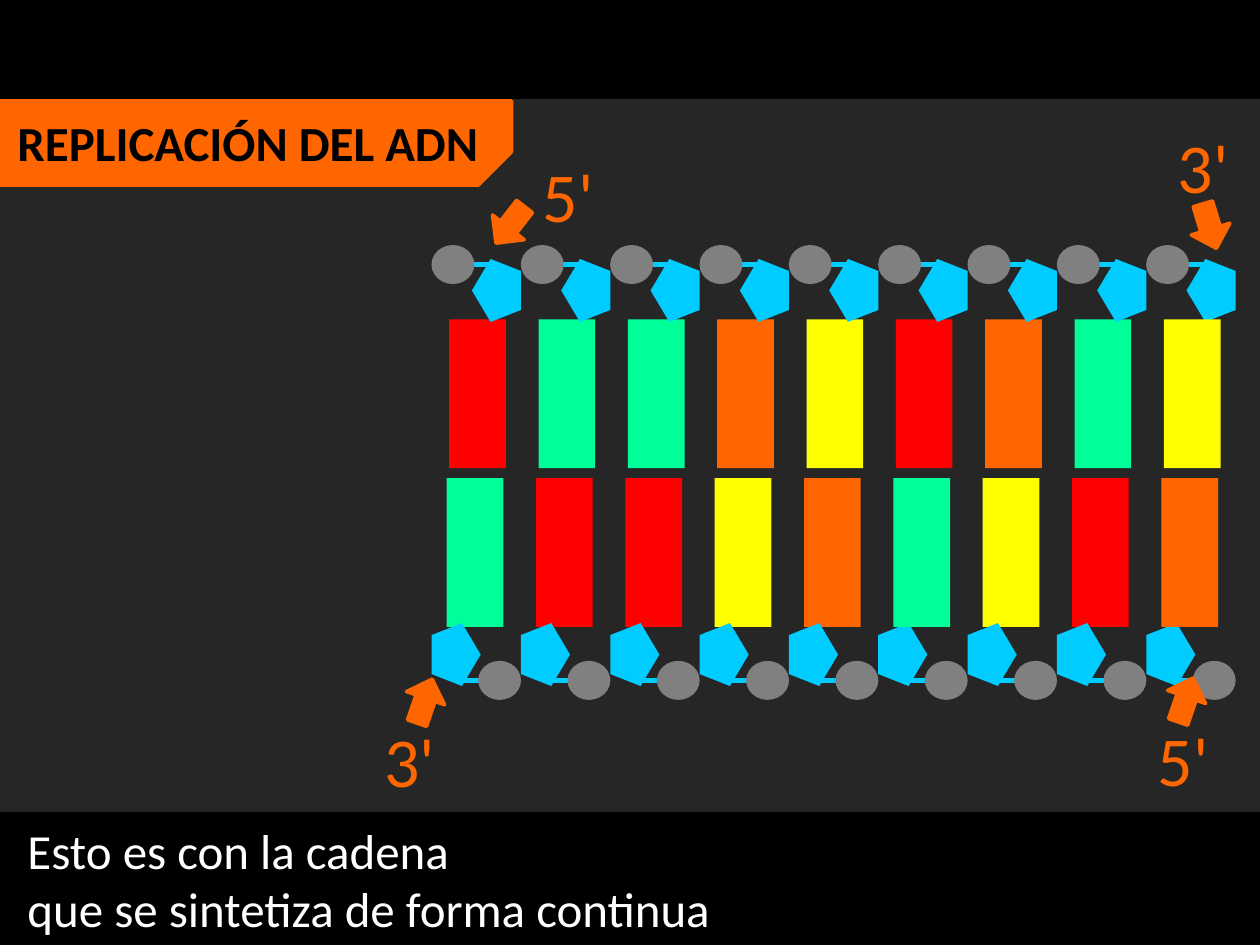
from dataclasses import dataclass

from lxml.etree import SubElement
from pptx import Presentation
from pptx.dml.color import RGBColor
from pptx.enum.shapes import MSO_CONNECTOR, MSO_SHAPE
from pptx.enum.text import MSO_AUTO_SIZE
from pptx.oxml.ns import qn
from pptx.util import Inches, Pt

WIDTH, HEIGHT = Inches(10), Inches(7.5)
STEP = 7.09  # distance between nucleotides, in percent of the width


@dataclass(frozen=True)
class Theme:
    font: str = "Calibri"
    back: str = "000000"
    panel: str = "262626"
    accent: str = "FF6600"
    sugar: str = "00CCFF"
    acid: str = "808080"
    light: str = "FFFFFF"
    body: int = 28
    label: int = 40
    edge: int = 2
    bond: int = 3


@dataclass(frozen=True)
class Strand:
    """Places of the first nucleotide's parts, in percent of the slide."""
    bases: str
    turn: int
    base: tuple
    sugar: tuple
    acid: tuple
    bond: float
    front: tuple  # columns whose base lies over its sugar


THEME = Theme()
BASES = {"R": "FF0000", "G": "00FF99", "O": "FF6600", "Y": "FFFF00"}
STRANDS = (
    Strand("GRRYOGYRO", 90, (35.45, 50.6), (34.25, 65.93),
           (37.95, 69.93), 72, (5, 8)),
    Strand("RGGOYROGY", 270, (35.65, 33.8), (37.45, 27.4),
           (34.25, 25.93), 28, (8,)),
)
ENDS = (  # text, text place, arrow place, arrow turn
    ("3'", (92.5, 12.4), (94.4, 21.47), 343.1),
    ("5'", (42.1, 15.47), (38.9, 21.33), 37.9),
    ("3'", (29.5, 75.33), (32.1, 71.73), 199),
    ("5'", (90.9, 75.2), (92.5, 71.6), 199),
)


def across(share):
    return int(WIDTH * share / 100)


def down(share):
    return int(HEIGHT * share / 100)


def paint(color):
    return RGBColor.from_string(color)


def shape(shapes, kind, spot, size, color, turn=0, edge=False):
    """Add a preset shape; spot and size describe it as seen once turned."""
    left, top = across(spot[0]), down(spot[1])
    wide, high = across(size[0]), down(size[1])
    if turn in (90, 270):
        left, top = left + (wide - high) // 2, top + (high - wide) // 2
        wide, high = high, wide
    item = shapes.add_shape(kind, left, top, wide, high)
    item.rotation = turn
    item.shadow.inherit = False
    item.fill.solid()
    item.fill.fore_color.rgb = paint(color)
    if edge:
        item.line.color.rgb = paint(color)
        item.line.width = Pt(THEME.edge)
    else:
        item.line.fill.background()
    return item


def bond(shapes, left, right, row):
    line = shapes.add_connector(MSO_CONNECTOR.STRAIGHT, across(left),
                                down(row), across(right), down(row))
    line.line.color.rgb = paint(THEME.sugar)
    line.line.width = Pt(THEME.bond)
    SubElement(line.element.spPr, qn("a:effectLst"))


def text(shapes, lines, spot, size, points, color, bold=False, wrap=True):
    box = shapes.add_textbox(across(spot[0]), down(spot[1]),
                             across(size[0]), down(size[1]))
    frame = box.text_frame
    frame.word_wrap = wrap
    frame.auto_size = MSO_AUTO_SIZE.SHAPE_TO_FIT_TEXT
    frame.text = "\n".join(lines)
    for para in frame.paragraphs:
        para.font.name = THEME.font
        para.font.size = Pt(points)
        para.font.bold = bold
        para.font.color.rgb = paint(color)


def chain(shapes, strand):
    """Draw one strand as a group of nucleotides."""
    group = shapes.add_group_shape().shapes
    for col, code in enumerate(strand.bases):
        shift = col * STEP

        def part(kind, spot, size, color):
            shape(group, kind, (spot[0] + shift, spot[1]), size, color,
                  strand.turn)

        def base():
            part(MSO_SHAPE.RECTANGLE, strand.base, (4.5, 15.73), BASES[code])

        if col not in strand.front:
            base()
        part(MSO_SHAPE.REGULAR_PENTAGON, strand.sugar, (3.9, 6.67),
             THEME.sugar)
        bond(group, 36.6 + shift, 39 + shift, strand.bond)
        part(MSO_SHAPE.OVAL, strand.acid, (3.4, 4.13), THEME.acid)
        if col in strand.front:
            base()


def banner(shapes):
    tab = shape(shapes, MSO_SHAPE.SNIP_1_RECTANGLE, (0, 10.67),
                (40.6, 8.93), THEME.accent, 180, edge=True)
    tab.adjustments[0] = 0.395
    tab.element.spPr.find(qn("a:xfrm")).set("flipH", "1")
    text(shapes, ["REPLICACIÓN DEL ADN"], (0.4, 11.2), (39, 7.6),
         THEME.body, THEME.back, bold=True, wrap=False)


def main():
    deck = Presentation()
    deck.slide_width, deck.slide_height = WIDTH, HEIGHT
    slide = deck.slides.add_slide(deck.slide_layouts[6])
    slide.background.fill.solid()
    slide.background.fill.fore_color.rgb = paint(THEME.back)
    shapes = slide.shapes

    shape(shapes, MSO_SHAPE.RECTANGLE, (0, 10.67), (100, 75.07),
          THEME.panel, edge=True)
    banner(shapes)
    for strand in STRANDS:
        chain(shapes, strand)
    for name, spot, tip, turn in ENDS:
        shape(shapes, MSO_SHAPE.DOWN_ARROW, tip, (3.2, 4.93),
              THEME.accent, turn, edge=True)
        text(shapes, [name], spot, (6.3, 10.27), THEME.label, THEME.accent)
    text(shapes,
         ["Esto es con la cadena", "que se sintetiza de forma continua"],
         (1.2, 86.13), (64.6, 13.87), THEME.body, THEME.light)
    deck.save("out.pptx")


if __name__ == "__main__":
    main()
